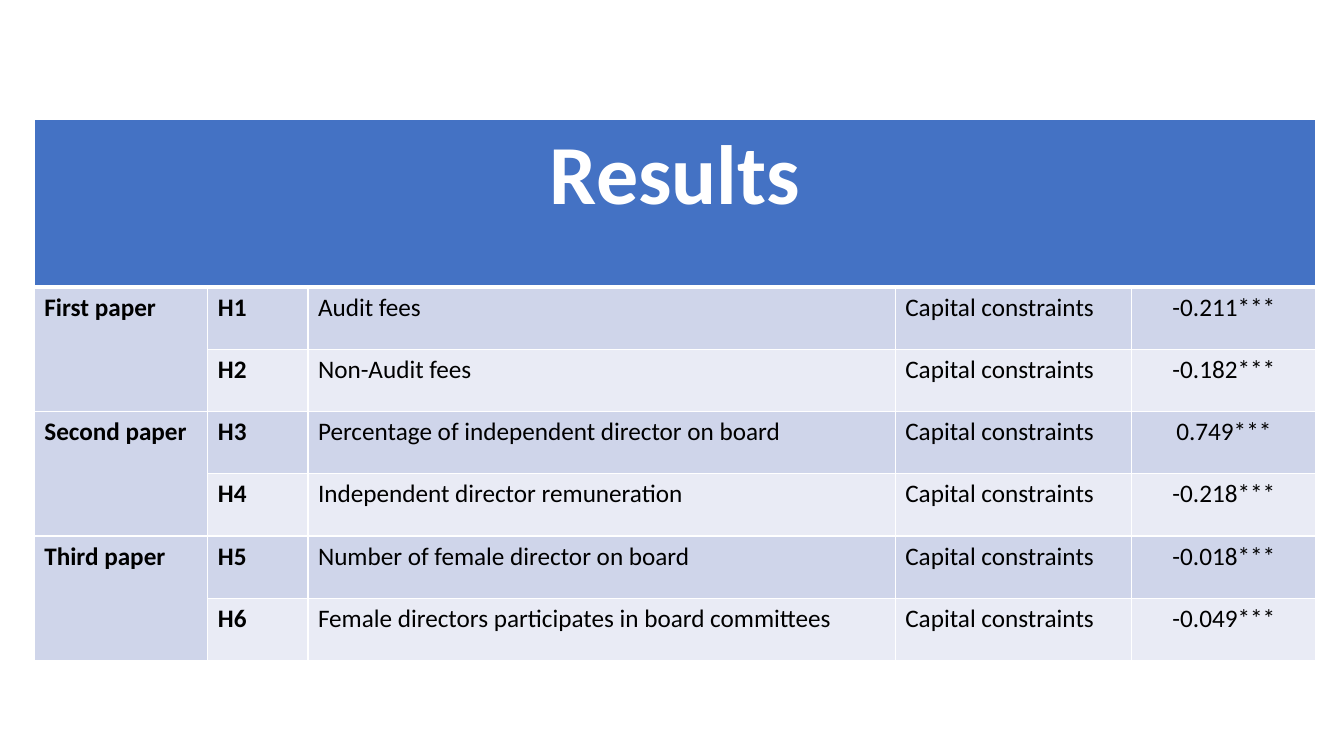
from dataclasses import dataclass

from lxml.etree import SubElement
from pptx import Presentation
from pptx.dml.color import RGBColor
from pptx.enum.text import PP_ALIGN as Align
from pptx.oxml.ns import qn
from pptx.util import Pt

HEADING = "Results"
OUTCOME = "Capital constraints"
PAPERS = [
    ("First paper", [("H1", "Audit fees", "-0.211***"),
                     ("H2", "Non-Audit fees", "-0.182***")]),
    ("Second paper", [("H3", "Percentage of independent director on board", "0.749***"),
                      ("H4", "Independent director remuneration", "-0.218***")]),
    ("Third paper", [("H5", "Number of female director on board", "-0.018***"),
                     ("H6", "Female directors participates in board committees", "-0.049***")]),
]


@dataclass(frozen=True)
class Theme:
    font: str = "Calibri"
    heading_size: int = 60
    body_size: int = 18
    header: str = "4472C4"
    bands: tuple = ("CFD5EA", "E9EBF5")
    light: str = "FFFFFF"
    dark: str = "000000"
    thin: int = 1
    thick: int = 3


THEME = Theme()
LEFT, TOP = 24.5, 85
COLUMN_WIDTHS = [124, 71.5, 419.5, 169, 131.5]
HEADER_HEIGHT, ROW_HEIGHT = 120, 44.5


def draw_borders(cell, top, bottom):
    properties = cell._tc.get_or_add_tcPr()
    widths = {"a:lnL": THEME.thin, "a:lnR": THEME.thin, "a:lnT": top, "a:lnB": bottom}
    for tag, width in widths.items():
        line = SubElement(properties, qn(tag), w=str(Pt(width)))
        fill = SubElement(line, qn("a:solidFill"))
        SubElement(fill, qn("a:srgbClr"), val=THEME.light)


def paint(cell, color):
    cell.fill.solid()
    cell.fill.fore_color.rgb = RGBColor.from_string(color)


def write(cell, text, size, color, bold, align):
    para = cell.text_frame.paragraphs[0]
    para.text = text
    para.alignment = align
    font = para.runs[0].font
    font.name = THEME.font
    font.size = Pt(size)
    font.bold = bold
    font.color.rgb = RGBColor.from_string(color)


def main():
    deck = Presentation()
    deck.slide_width, deck.slide_height = Pt(960), Pt(540)
    page = deck.slides.add_slide(deck.slide_layouts[6])

    body_rows = sum(len(hypotheses) for _, hypotheses in PAPERS)
    row_heights = [HEADER_HEIGHT] + [ROW_HEIGHT] * body_rows
    frame = page.shapes.add_table(
        len(row_heights), len(COLUMN_WIDTHS), Pt(LEFT), Pt(TOP),
        Pt(sum(COLUMN_WIDTHS)), Pt(sum(row_heights)))
    table = frame.table
    for column, width in zip(table.columns, COLUMN_WIDTHS):
        column.width = Pt(width)
    for row, height in zip(table.rows, row_heights):
        row.height = Pt(height)

    for index, row in enumerate(table.rows):
        top = THEME.thick if index == 1 else THEME.thin
        bottom = THEME.thick if index == 0 else THEME.thin
        color = THEME.bands[(index - 1) % 2] if index else THEME.header
        for cell in row.cells:
            draw_borders(cell, top, bottom)
            paint(cell, color)

    heading = table.cell(0, 0)
    heading.merge(table.cell(0, len(COLUMN_WIDTHS) - 1))
    write(heading, HEADING, THEME.heading_size, THEME.light, True, Align.CENTER)

    first = 1
    for paper, hypotheses in PAPERS:
        label = table.cell(first, 0)
        label.merge(table.cell(first + len(hypotheses) - 1, 0))
        write(label, paper, THEME.body_size, THEME.dark, True, Align.LEFT)
        for row, (code, factor, effect) in enumerate(hypotheses, first):
            for column, text in enumerate((code, factor, OUTCOME, effect), 1):
                align = Align.CENTER if text == effect else Align.LEFT
                write(table.cell(row, column), text, THEME.body_size,
                      THEME.dark, column == 1, align)
        first += len(hypotheses)

    deck.save("out.pptx")


if __name__ == "__main__":
    main()
